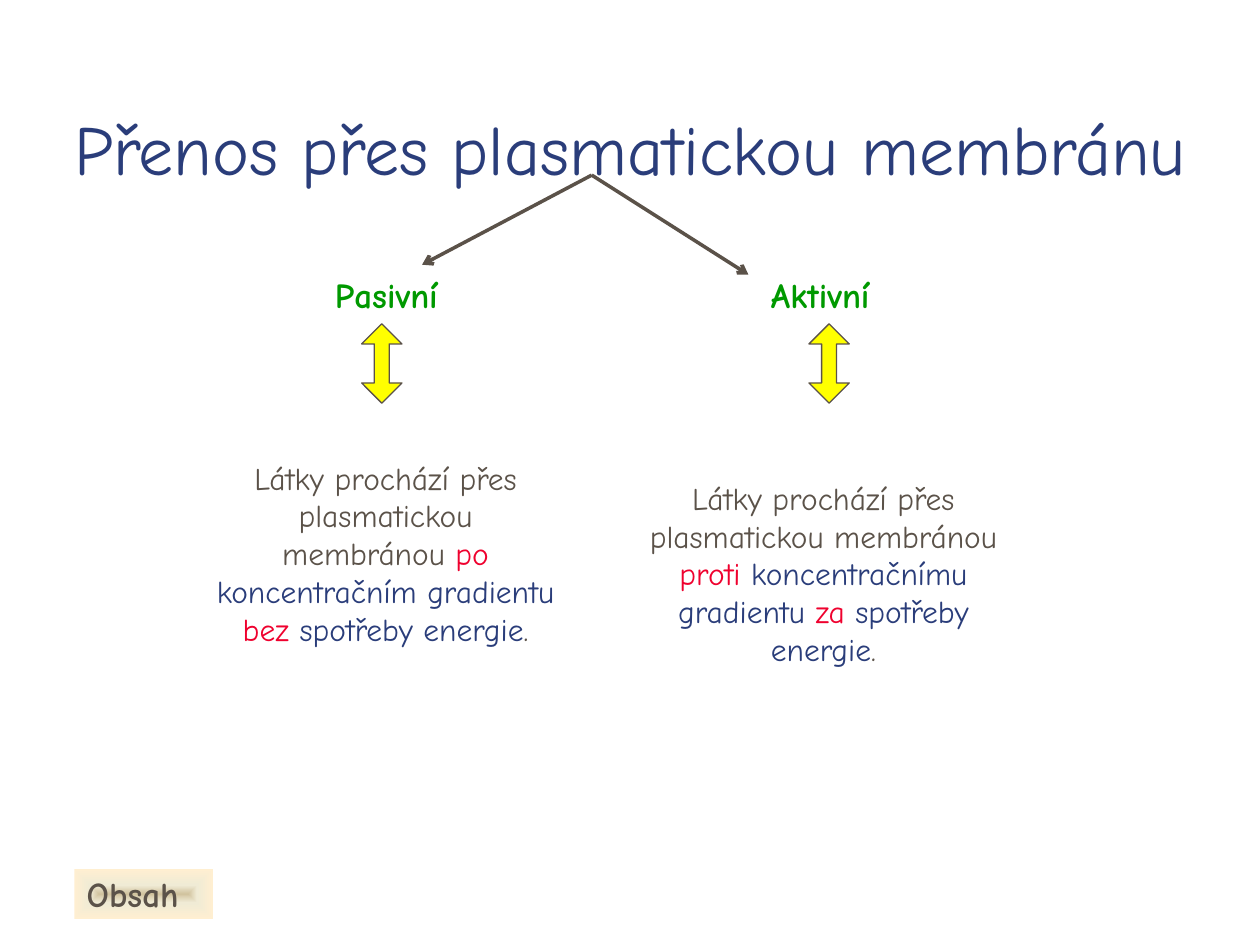
from dataclasses import dataclass

from lxml.etree import SubElement
from pptx import Presentation
from pptx.dml.color import RGBColor
from pptx.enum.shapes import MSO_CONNECTOR, MSO_SHAPE
from pptx.enum.text import MSO_ANCHOR, MSO_AUTO_SIZE, PP_ALIGN
from pptx.oxml import parse_xml
from pptx.oxml.ns import nsdecls, qn
from pptx.util import Inches, Pt


@dataclass(frozen=True)
class Theme:
    font: str = "Comic Neue"
    navy: str = "2A3D7A"
    brown: str = "5B5249"
    green: str = "009900"
    red: str = "EF012E"
    yellow: str = "FFFF00"
    button_stops: tuple = ((0, "D1C39F"), (35, "F0EBD5"), (100, "FFEFD1"))
    title_size: int = 40
    label_size: int = 20
    body_size: int = 18
    branch_width: float = 2
    outline_width: float = 0.75


THEME = Theme()
CELL = 0.1


@dataclass(frozen=True)
class Box:
    column: float
    row: float
    columns: float
    rows: float

    def inner(self, column, row, columns, rows):
        return Box(self.column + column, self.row + row, columns, rows)

    def point(self, across, down):
        return (Inches((self.column + across * self.columns) * CELL),
                Inches((self.row + down * self.rows) * CELL))

    def frame(self):
        return (*self.point(0, 0), Inches(self.columns * CELL), Inches(self.rows * CELL))


def color(value):
    return RGBColor.from_string(value)


def write(shape, *spans, size, bold=False, align=PP_ALIGN.LEFT,
          anchor=MSO_ANCHOR.TOP, wrap=True, grow=False):
    frame = shape.text_frame
    frame.word_wrap = wrap
    frame.vertical_anchor = anchor
    frame.auto_size = MSO_AUTO_SIZE.SHAPE_TO_FIT_TEXT if grow else MSO_AUTO_SIZE.NONE
    para = frame.paragraphs[0]
    para.alignment = align
    for text, tint in spans:
        span = para.add_run()
        span.text = text
        span.font.name = THEME.font
        span.font.size = Pt(size)
        span.font.bold = bold
        span.font.color.rgb = color(tint)


def add_text(page, box, *spans, **style):
    write(page.shapes.add_textbox(*box.frame()), *spans, **style)


def add_title(page, box, text):
    add_text(page, box, (text, THEME.navy), size=THEME.title_size,
             align=PP_ALIGN.CENTER, anchor=MSO_ANCHOR.BOTTOM)


def add_branch(page, box, start, end):
    branch = page.shapes.add_connector(
        MSO_CONNECTOR.STRAIGHT, *box.point(*start), *box.point(*end))
    branch.line.color.rgb = color(THEME.brown)
    branch.line.width = Pt(THEME.branch_width)
    properties = branch._element.spPr
    SubElement(properties.find(qn("a:ln")), qn("a:tailEnd"), type="arrow")
    SubElement(properties, qn("a:effectLst"))


def add_transport(page, box, label, label_at, body_at, anchor, direction, gradient, energy):
    add_text(page, box.inner(*label_at), (label, THEME.green), size=THEME.label_size,
             bold=True, wrap=False, grow=True)

    arrow = page.shapes.add_shape(MSO_SHAPE.UP_DOWN_ARROW, *box.inner(12.8, 4.5, 3.2, 6.3).frame())
    arrow.shadow.inherit = False
    arrow.adjustments[0] = 0.3
    arrow.adjustments[1] = 0.37
    arrow.fill.solid()
    arrow.fill.fore_color.rgb = color(THEME.yellow)
    arrow.line.color.rgb = color(THEME.brown)
    arrow.line.width = Pt(THEME.outline_width)

    add_text(page, box.inner(*body_at),
             ("Látky prochází přes plasmatickou membránou ", THEME.brown),
             (f"{direction} ", THEME.red),
             (gradient, THEME.navy),
             (f" {energy} ", THEME.red),
             ("spotřeby energie", THEME.navy),
             (".", THEME.brown),
             size=THEME.body_size, align=PP_ALIGN.CENTER, anchor=anchor, grow=True)


def add_button(page, box, text):
    button = page.shapes.add_shape(MSO_SHAPE.ACTION_BUTTON_CUSTOM, *box.frame())
    button.shadow.inherit = False
    button.line.fill.background()
    stops = "".join(f'<a:gs pos="{share * 1000}"><a:srgbClr val="{tint}"/></a:gs>'
                    for share, tint in THEME.button_stops)
    button._element.spPr.find(qn("a:prstGeom")).addnext(parse_xml(
        f'<a:gradFill {nsdecls("a")}><a:gsLst>{stops}</a:gsLst><a:path path="rect">'
        '<a:fillToRect l="50000" t="50000" r="50000" b="50000"/></a:path></a:gradFill>'))
    write(button, (text, THEME.brown), size=THEME.label_size, bold=True,
          anchor=MSO_ANCHOR.MIDDLE, wrap=False)


def main():
    deck = Presentation()
    deck.slide_width, deck.slide_height = Inches(10), Inches(7.5)
    page = deck.slides.add_slide(deck.slide_layouts[6])

    add_title(page, Box(0, 3, 100, 12.5), "Přenos přes plasmatickou membránu")
    branches = Box(33.5, 13.9, 25.9, 7.9)
    for end in ((0, 0.9), (1, 1)):
        add_branch(page, branches, (0.52, 0), end)

    add_transport(page, Box(15.9, 21.2, 29.4, 33.7), "Pasivní",
                  (9.7, 0, 10.8, 4.3), (0, 14.7, 29.4, 19), MSO_ANCHOR.TOP,
                  "po", "koncentračním gradientu", "bez")
    add_transport(page, Box(51.4, 21.2, 29.3, 33.8), "Aktivní",
                  (8.8, 0, 11.2, 4.3), (-1.4, 14.8, 30.7, 19), MSO_ANCHOR.MIDDLE,
                  "proti", "koncentračnímu gradientu", "za")
    add_button(page, Box(5.9, 69, 11, 3.9), "Obsah")
    deck.save("out.pptx")


if __name__ == "__main__":
    main()
